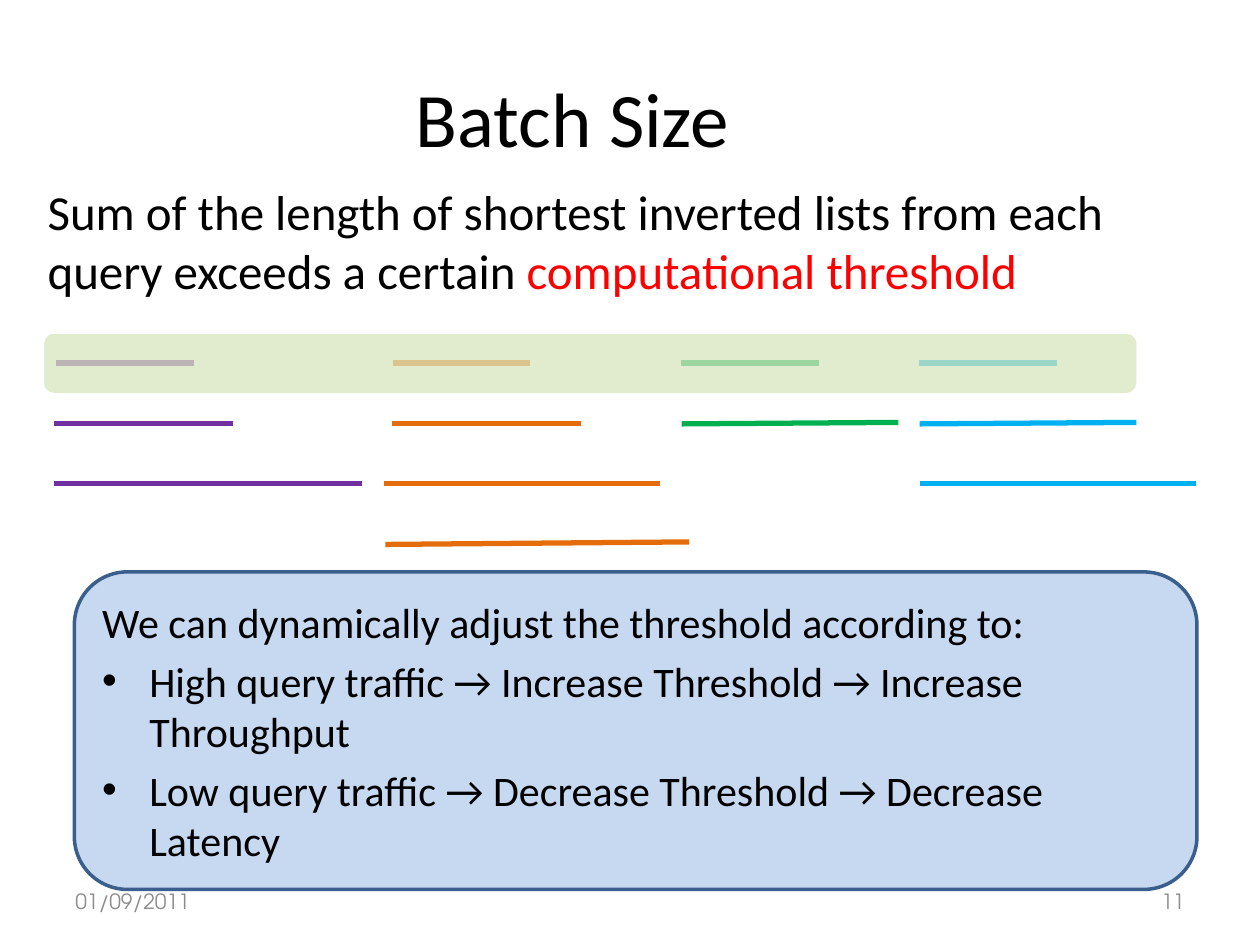
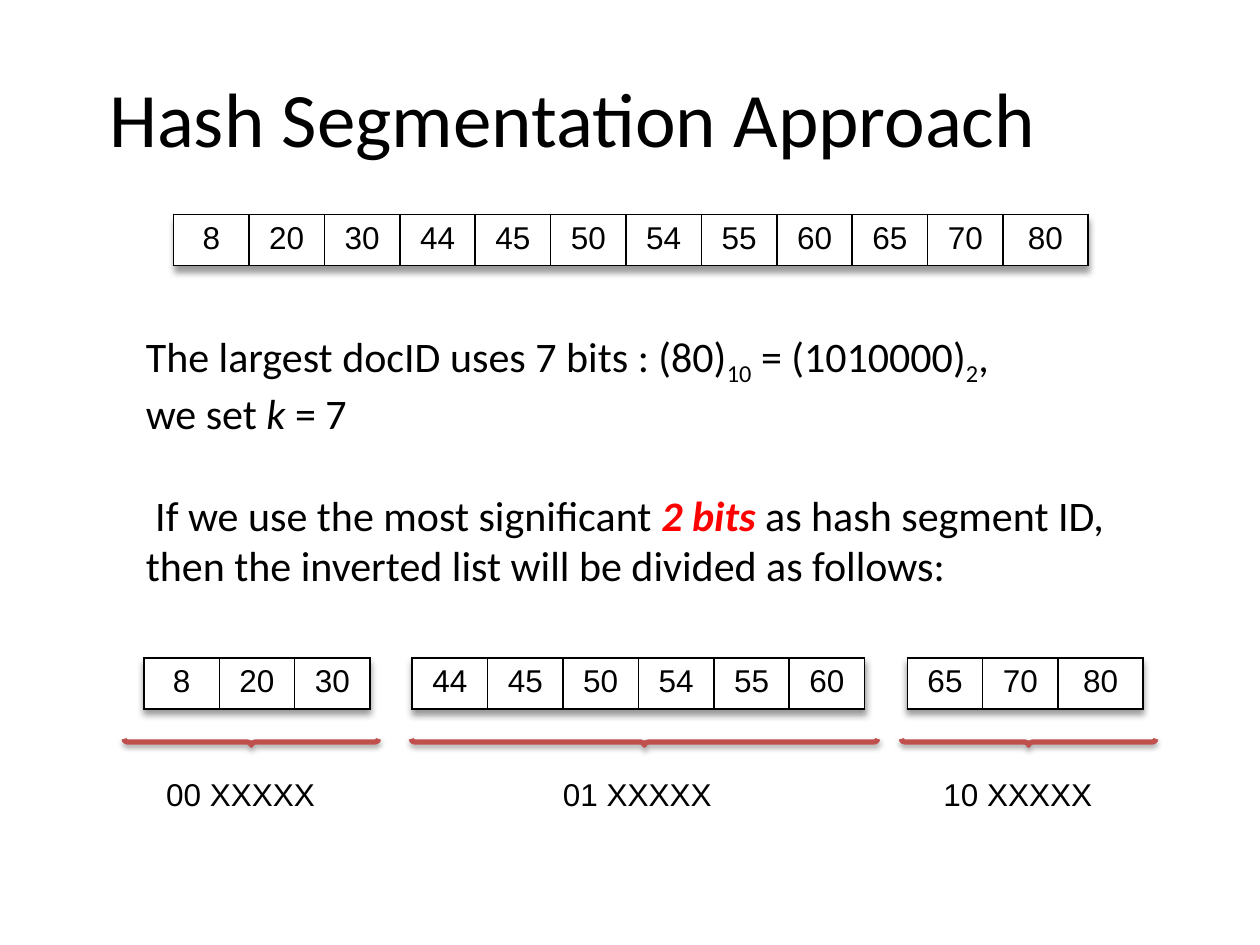
import dataclasses

import pptx
import pptx.dml.color
import pptx.enum.shapes
import pptx.enum.text
import pptx.oxml
import pptx.oxml.ns
import pptx.util

Cm = pptx.util.Cm
Pt = pptx.util.Pt
ALIGN = pptx.enum.text.PP_ALIGN
ANCHOR = pptx.enum.text.MSO_ANCHOR
SHAPE = pptx.enum.shapes.MSO_SHAPE


@dataclasses.dataclass(frozen=True)
class Theme:
    black: str = "000000"
    white: str = "FFFFFF"
    accent: str = "FF0000"
    footer: str = "8C8C8C"
    callout_fill: str = "C6D9F1"
    callout_line: str = "3A5F8C"
    band: str = "D7E4BD"
    brace: str = "C0504D"
    purple: str = "7030A0"
    orange: str = "E46C0A"
    green: str = "00B050"
    blue: str = "00B0F0"
    body_font: str = "Calibri"
    data_font: str = "Arial"
    footer_font: str = "TeX Gyre Adventor"
    title_size: int = 44
    lead_size: int = 28
    body_size: int = 24
    data_size: int = 18
    footer_size: int = 12


THEME = Theme()
TITLE_BOX = (1.27, 0.76, 20.55, 3.18)
DOC_IDS = [8, 20, 30, 44, 45, 50, 54, 55, 60, 65, 70, 80]


# Shared helpers
def rgb(color):
    return pptx.dml.color.RGBColor.from_string(color)


def drawing_xml(tag, attributes="", content=""):
    namespace = pptx.oxml.ns.nsdecls("a")
    return pptx.oxml.parse_xml(f"<a:{tag} {namespace} {attributes}>{content}</a:{tag}>")


def shadow_xml(opacity, blur, distance):
    return drawing_xml(
        "outerShdw",
        f'blurRad="{Pt(blur)}" dist="{Pt(distance)}" dir="5400000" rotWithShape="0"',
        f'<a:srgbClr val="{THEME.black}"><a:alpha val="{opacity * 1000}"/></a:srgbClr>')


def format_paragraph(paragraph, size, font=THEME.body_font, color=THEME.black,
                     align=ALIGN.LEFT):
    paragraph.alignment = align
    for run in paragraph.runs:
        run.font.size = Pt(size)
        run.font.name = font
        run.font.color.rgb = rgb(color)


def indent_paragraph(paragraph, margin, first_line):
    properties = paragraph._p.get_or_add_pPr()
    properties.set("marL", str(Cm(margin)))
    properties.set("indent", str(Cm(first_line)))
    return properties


def add_text(slide, box, paragraphs, size, **style):
    """Add a text box; each paragraph is a list of run texts."""
    shape = slide.shapes.add_textbox(*map(Cm, box))
    text_frame = shape.text_frame
    text_frame.word_wrap = True
    for index, pieces in enumerate(paragraphs):
        paragraph = text_frame.add_paragraph() if index else text_frame.paragraphs[0]
        for piece in pieces:
            paragraph.add_run().text = piece
        format_paragraph(paragraph, size, **style)
    return text_frame


def add_title_slide(presentation, title):
    slide = presentation.slides.add_slide(presentation.slide_layouts[5])
    shape = slide.shapes.title
    shape.left, shape.top, shape.width, shape.height = map(Cm, TITLE_BOX)
    shape.text_frame.text = title
    shape.text_frame.vertical_anchor = ANCHOR.MIDDLE
    format_paragraph(shape.text_frame.paragraphs[0], THEME.title_size, align=ALIGN.CENTER)
    return slide


def add_footer(slide, left, top, right, date, number):
    width, height = 5.92, 1.02
    for text, box_left, align in ((date, left, ALIGN.LEFT),
                                  (number, right - width, ALIGN.RIGHT)):
        text_frame = add_text(slide, (box_left, top, width, height), [[text]],
                              THEME.footer_size, font=THEME.footer_font,
                              color=THEME.footer, align=align)
        text_frame.vertical_anchor = ANCHOR.MIDDLE


# Batch size slide
def add_inverted_lists(slide, left, top):
    row_step = 1.21
    # Each list: offset from the left, length, rise
    queries = {
        THEME.purple: [(0.03, 2.79, 0), (0, 3.61, 0), (0, 6.2, 0)],
        THEME.orange: [(6.83, 2.77, 0), (6.81, 3.81, 0), (6.66, 5.56, 0),
                       (6.68, 6.12, 0.05)],
        THEME.green: [(12.63, 2.79, 0), (12.65, 4.37, 0.03)],
        THEME.blue: [(17.43, 2.79, 0), (17.45, 4.37, 0.03), (17.45, 5.56, 0)],
    }
    for color, lists in queries.items():
        for row, (offset, length, rise) in enumerate(lists):
            start, middle = left + offset, top + row * row_step
            connector = slide.shapes.add_connector(
                pptx.enum.shapes.MSO_CONNECTOR.STRAIGHT,
                Cm(start), Cm(middle + rise / 2),
                Cm(start + length), Cm(middle - rise / 2))
            connector.line.color.rgb = rgb(color)
            connector.line.width = Pt(3)
            connector.element.spPr.append(drawing_xml("effectLst"))

    # Translucent band over the shortest lists
    band = slide.shapes.add_shape(SHAPE.ROUNDED_RECTANGLE, Cm(left - 0.2),
                                  Cm(top - 0.59), Cm(22.02), Cm(1.19))
    band.shadow.inherit = False
    band.fill.solid()
    band.fill.fore_color.rgb = rgb(THEME.band)
    band.line.fill.background()
    color_element = band.element.spPr.find(".//" + pptx.oxml.ns.qn("a:srgbClr"))
    color_element.append(drawing_xml("alpha", 'val="73000"'))


def add_callout(slide, box, lead, bullets):
    shape = slide.shapes.add_shape(SHAPE.ROUNDED_RECTANGLE, *map(Cm, box))
    shape.shadow.inherit = False
    shape.fill.solid()
    shape.fill.fore_color.rgb = rgb(THEME.callout_fill)
    shape.line.color.rgb = rgb(THEME.callout_line)
    shape.line.width = Pt(2)
    text_frame = shape.text_frame
    text_frame.word_wrap = True
    text_frame.vertical_anchor = ANCHOR.MIDDLE
    text_frame.text = "\n".join([lead, *bullets])
    for index, paragraph in enumerate(text_frame.paragraphs):
        format_paragraph(paragraph, THEME.body_size)
        paragraph.space_before = Pt(4.8)
        properties = indent_paragraph(paragraph, 0.95, -0.95)
        if index:
            properties.append(drawing_xml("buFont", 'typeface="Arial"'))
            properties.append(drawing_xml("buChar", 'char="•"'))


def build_batch_size(presentation):
    slide = add_title_slide(presentation, "Batch Size")
    add_inverted_lists(slide, 1.09, 7.32)
    lead = add_text(slide, (0.71, 3.53, 23.19, 2.64), [[
        "Sum of the length of shortest inverted lists from each query exceeds a certain ",
        "computational threshold"]], THEME.lead_size)
    lead.paragraphs[0].runs[1].font.color.rgb = rgb(THEME.accent)
    add_callout(slide, (1.5, 11.53, 22.63, 6.4),
                "We can dynamically adjust the threshold according to:",
                ["High query traffic → Increase Threshold → Increase Throughput",
                 "Low query traffic → Decrease Threshold → Decrease Latency"])
    add_footer(slide, 1.27, 17.65, 24.13, "01/09/2011", "11")


# Hash segmentation slide
def add_id_table(slide, left, top, doc_ids):
    widths = [1.71 if doc_id == DOC_IDS[-1] else 1.52 for doc_id in doc_ids]
    height = 1.03
    table = slide.shapes.add_table(1, len(doc_ids), Cm(left), Cm(top),
                                   Cm(sum(widths)), Cm(height)).table
    table.first_row = table.horz_banding = False
    effects = drawing_xml("effectLst")
    effects.append(shadow_xml(40, 4, 3))
    table._tbl.tblPr.insert(0, effects)
    for column, (doc_id, width) in enumerate(zip(doc_ids, widths)):
        table.columns[column].width = Cm(width)
        cell = table.cell(0, column)
        cell.text_frame.text = str(doc_id)
        format_paragraph(cell.text_frame.paragraphs[0], THEME.data_size,
                         THEME.data_font, align=ALIGN.CENTER)
        cell.fill.solid()
        cell.fill.fore_color.rgb = rgb(THEME.white)
        properties = cell._tc.get_or_add_tcPr()
        for index, side in enumerate("LRTB"):
            properties.insert(index, drawing_xml(
                f"ln{side}", f'w="{Pt(1)}"',
                f'<a:solidFill><a:srgbClr val="{THEME.black}"/></a:solidFill>'))


def add_brace(slide, left, middle, length):
    thickness = 0.13
    center = left + length / 2
    brace = slide.shapes.add_shape(
        SHAPE.RIGHT_BRACE, Cm(center - thickness / 2), Cm(middle - length / 2),
        Cm(thickness), Cm(length))
    brace.rotation = 90
    brace.adjustments[0] = 0.61
    brace.fill.background()
    brace.line.color.rgb = rgb(THEME.brace)
    brace.line.width = Pt(3)
    brace.shadow.inherit = False
    effects = brace.element.spPr.find(pptx.oxml.ns.qn("a:effectLst"))
    effects.append(shadow_xml(35, 3.1, 1.8))


def add_segment(slide, left, top, length, doc_ids, table_offset, label, label_offset):
    add_id_table(slide, left + table_offset, top, doc_ids)
    add_brace(slide, left, top + 1.7, length)
    add_text(slide, (left + label_offset, top + 2.23, 4.39, 1.02), [[label]],
             THEME.data_size, font=THEME.data_font)


def add_explanation(slide, box):
    text_frame = add_text(slide, box, [
        ["The largest docID uses 7 bits : (80)", "10", " = (1010000)", "2", ","],
        ["we set ", "k", " = 7"],
        ["If we use the most significant ", "2 bits ",
         "as hash segment ID, then the inverted list will be divided as follows:"],
    ], THEME.body_size)
    largest, key_length, segment_id = text_frame.paragraphs
    for run in (largest.runs[1], largest.runs[3]):
        run.font._element.set("baseline", "-25000")
    key_length.runs[1].font.italic = True
    segment_id.space_before = Pt(29.3)
    indent_paragraph(segment_id, 0, 0.19)
    emphasis = segment_id.runs[1].font
    emphasis.bold = emphasis.italic = True
    emphasis.color.rgb = rgb(THEME.accent)


def build_hash_segmentation(presentation):
    slide = add_title_slide(presentation, "Hash Segmentation Approach")
    add_id_table(slide, 3.5, 4.32, DOC_IDS)
    add_explanation(slide, (2.69, 6.53, 21.21, 5.38))
    # Left, brace length, docIDs, table offset, label, label offset
    segments = [
        (2.5, 5.13, DOC_IDS[:3], 0.4, "00 XXXXX", 0.6),
        (8.29, 9.4, DOC_IDS[3:9], 0.02, "01 XXXXX", 2.81),
        (18.17, 5.13, DOC_IDS[9:], 0.12, "10 XXXXX", 0.6),
    ]
    for left, *details in segments:
        add_segment(slide, left, 13.26, *details)


def main():
    presentation = pptx.Presentation()
    presentation.slide_width, presentation.slide_height = Cm(25.4), Cm(19.05)
    build_batch_size(presentation)
    build_hash_segmentation(presentation)
    presentation.save("out.pptx")


if __name__ == "__main__":
    main()
